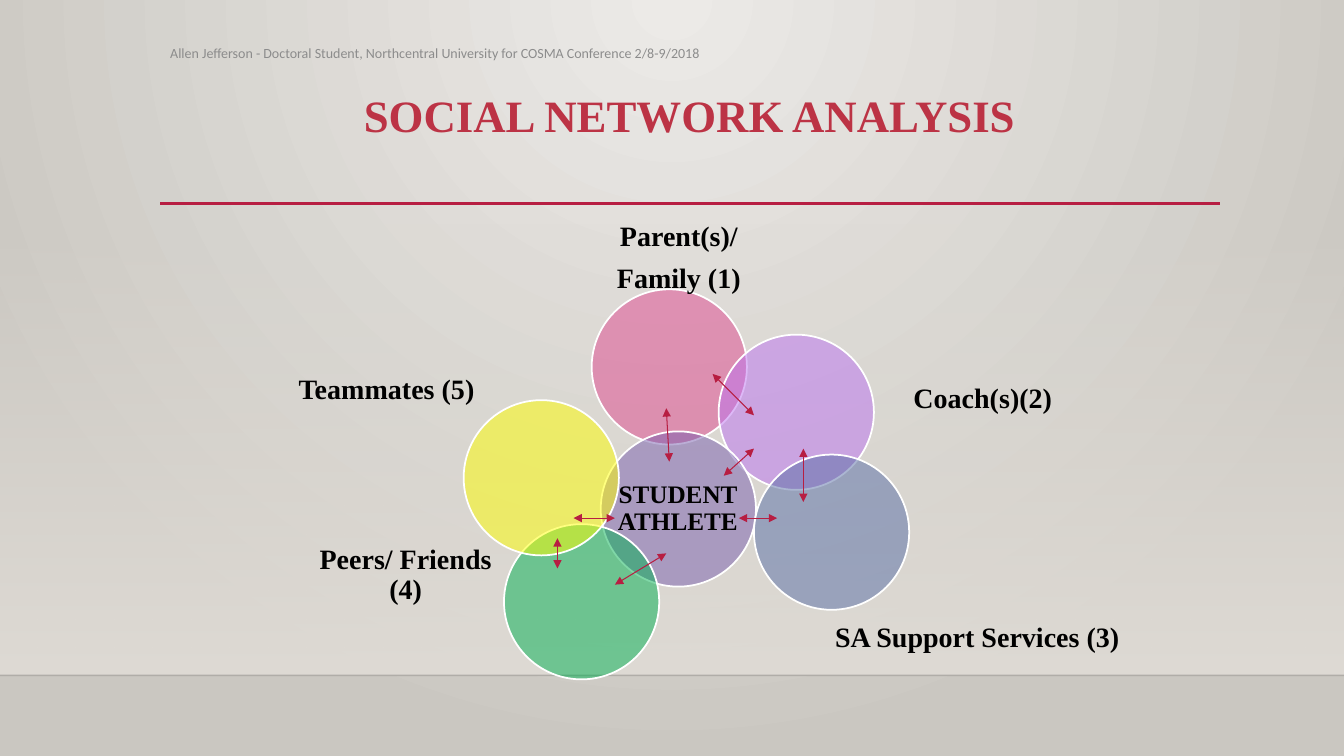
from dataclasses import dataclass

import pptx
import pptx.dml.color
import pptx.enum.shapes
import pptx.enum.text
import pptx.oxml
import pptx.oxml.ns
import pptx.util

RGB = pptx.dml.color.RGBColor
ALIGN = pptx.enum.text.PP_ALIGN
ANCHOR = pptx.enum.text.MSO_ANCHOR
SHAPE = pptx.enum.shapes.MSO_SHAPE
NS = pptx.oxml.ns.nsdecls("a")

CELL = pptx.util.Inches(0.1)
COLS, ROWS = 133.33, 75
DIAMETER = 15.4
SERIF, SANS = "Times New Roman", "Calibri"

BLACK = RGB(0x00, 0x00, 0x00)
WHITE = RGB(0xFF, 0xFF, 0xFF)
GREY = RGB(0x8C, 0x8C, 0x8C)
CRIMSON = RGB(0xB7, 0x1E, 0x42)
TITLE_RED = RGB(0xBC, 0x33, 0x45)
PINK = RGB(0xDE, 0x47, 0x8E)
LILAC = RGB(0xBC, 0x72, 0xF0)
PURPLE = RGB(0x79, 0x5F, 0xAF)
SLATE = RGB(0x58, 0x6E, 0xA6)
GREEN = RGB(0x00, 0xB0, 0x50)
YELLOW = RGB(0xFF, 0xFF, 0x00)
WALL_LIGHT = RGB(0xEC, 0xEA, 0xE7)
WALL_DARK = RGB(0xCA, 0xC7, 0xC1)
HAZE = RGB(0xDF, 0xDB, 0xD5)


@dataclass(frozen=True)
class Box:
    col: float
    row: float
    cols: float
    rows: float

    def emu(self) -> list[int]:
        return [round(v * CELL) for v in (self.col, self.row, self.cols, self.rows)]


@dataclass(frozen=True)
class Member:
    label: str
    color: RGB
    col: float
    row: float
    label_box: Box
    size: int = 20


@dataclass(frozen=True)
class Tie:
    col1: float
    row1: float
    col2: float
    row2: float


MEMBERS = [
    Member("Parent(s)/\nFamily (1)", PINK, 58.7, 28.7, Box(57.7, 20.4, 19.3, 10.5)),
    Member("Coach(s)(2)", LILAC, 71.3, 33.2, Box(84.7, 33.9, 25.6, 11.5)),
    Member("STUDENT ATHLETE", PURPLE, 59.6, 42.8, Box(58.1, 44.1, 18.3, 12.8), 18),
    Member("SA Support Services (3)", SLATE, 74.8, 45.1, Box(82.5, 59.9, 28.9, 6.8)),
    Member("Peers/ Friends (4)", GREEN, 50, 52, Box(31.1, 50.7, 18.3, 12.8)),
    Member("Teammates (5)", YELLOW, 46, 39.7, Box(29.2, 32.3, 18.3, 12.8)),
]

TIES = [
    Tie(70.7, 37.1, 74.8, 41.2),
    Tie(79.7, 44.5, 79.7, 49.8),
    Tie(56.9, 51.4, 61, 51.4),
    Tie(55.3, 53.4, 55.3, 56.4),
    Tie(66.1, 54.9, 61, 58),
    Tie(66.1, 40.5, 66.4, 45.8),
    Tie(74.8, 44.5, 71.8, 47.2),
    Tie(77.1, 51.4, 73.3, 51.4),
]


def set_alpha(color_parent, percent: int) -> None:
    clr = color_parent.find(".//" + pptx.oxml.ns.qn("a:srgbClr"))
    clr.append(pptx.oxml.parse_xml(f'<a:alpha {NS} val="{percent * 1000}"/>'))


def set_gradient(fill, grad_parent, start: RGB, end: RGB, direction: str) -> None:
    fill.gradient()
    for stop, color, position in zip(fill.gradient_stops, (start, end), (0, 1)):
        stop.color.rgb = color
        stop.position = position
    grad = grad_parent.find(".//" + pptx.oxml.ns.qn("a:gradFill"))
    grad.remove(grad.find(pptx.oxml.ns.qn("a:lin")))
    grad.append(pptx.oxml.parse_xml(direction))


def style_text(tf, size: int, color: RGB, font: str, bold: bool = True) -> None:
    for p in tf.paragraphs:
        for r in p.runs:
            r.font.size = pptx.util.Pt(size)
            r.font.name = font
            r.font.bold = bold
            r.font.color.rgb = color


def add_line(s, tie: Tie, color: RGB, width: float, arrows: bool = False):
    ends = [round(v * CELL) for v in (tie.col1, tie.row1, tie.col2, tie.row2)]
    line = s.shapes.add_connector(pptx.enum.shapes.MSO_CONNECTOR.STRAIGHT, *ends)
    line.line.color.rgb = color
    line.line.width = pptx.util.Pt(width)
    if arrows:
        ln = line.line._get_or_add_ln()
        for end in ("headEnd", "tailEnd"):
            ln.append(pptx.oxml.parse_xml(f'<a:{end} {NS} type="triangle"/>'))
    line._element.spPr.append(pptx.oxml.parse_xml(f"<a:effectLst {NS}/>"))
    return line


def add_backdrop(s) -> None:
    radial = (f'<a:path {NS} path="circle">'
              '<a:fillToRect l="43000" r="43000" b="100000"/></a:path>')
    set_gradient(s.background.fill, s._element, WALL_LIGHT, WALL_DARK, radial)
    band = s.shapes.add_shape(SHAPE.RECTANGLE, *Box(0, 22.1, COLS, 44.9).emu())
    band.shadow.inherit = False
    band.line.fill.background()
    set_gradient(band.fill, band._element.spPr, HAZE, HAZE,
                 f'<a:lin {NS} ang="5400000" scaled="0"/>')
    set_alpha(band._element.spPr, 0)
    shelf = add_line(s, Tie(0, 67, COLS, 67), BLACK, 1)
    set_alpha(shelf._element.spPr, 20)
    add_line(s, Tie(15.9, 20.2, 121, 20.2), CRIMSON, 2.5)


def add_title(s) -> None:
    title = s.shapes.title
    title.left, title.top, title.width, title.height = Box(15.9, 8.8, 105, 11.5).emu()
    tf = title.text_frame
    tf.text = "SOCIAL NETWORK ANALYSIS"
    tf.vertical_anchor = ANCHOR.TOP
    tf.paragraphs[0].alignment = ALIGN.CENTER
    tf.paragraphs[0].line_spacing = 0.9
    style_text(tf, 32, TITLE_RED, SERIF)


def add_member(s, member: Member) -> None:
    circle = s.shapes.add_shape(
        SHAPE.OVAL, *Box(member.col, member.row, DIAMETER, DIAMETER).emu())
    circle.shadow.inherit = False
    circle.fill.solid()
    circle.fill.fore_color.rgb = member.color
    set_alpha(circle._element.spPr, 50)
    circle.line.color.rgb = WHITE
    circle.line.width = pptx.util.Pt(1.25)

    tf = s.shapes.add_textbox(*member.label_box.emu()).text_frame
    tf.word_wrap = True
    tf.vertical_anchor = ANCHOR.MIDDLE
    tf.margin_left = tf.margin_right = tf.margin_top = tf.margin_bottom = 0
    tf.text = member.label
    for p in tf.paragraphs:
        p.alignment = ALIGN.CENTER
        p.line_spacing = 0.9
        p.space_after = pptx.util.Pt(0.4 * member.size)
    style_text(tf, member.size, BLACK, SERIF)


def add_credit(s) -> None:
    tf = s.shapes.add_textbox(*Box(15.9, 3.6, 64.9, 3.4).emu()).text_frame
    tf.word_wrap = True
    tf.vertical_anchor = ANCHOR.MIDDLE
    tf.text = ("Allen Jefferson - Doctoral Student, Northcentral University "
               "for COSMA Conference 2/8-9/2018")
    style_text(tf, 10, GREY, SANS, bold=False)


def main() -> None:
    prs = pptx.Presentation()
    prs.slide_width = round(COLS * CELL)
    prs.slide_height = ROWS * CELL
    s = prs.slides.add_slide(prs.slide_layouts.get_by_name("Title Only"))
    add_backdrop(s)
    add_title(s)
    for member in MEMBERS:
        add_member(s, member)
    for tie in TIES:
        add_line(s, tie, CRIMSON, 0.75, arrows=True)
    add_credit(s)
    prs.save("out.pptx")


if __name__ == "__main__":
    main()
